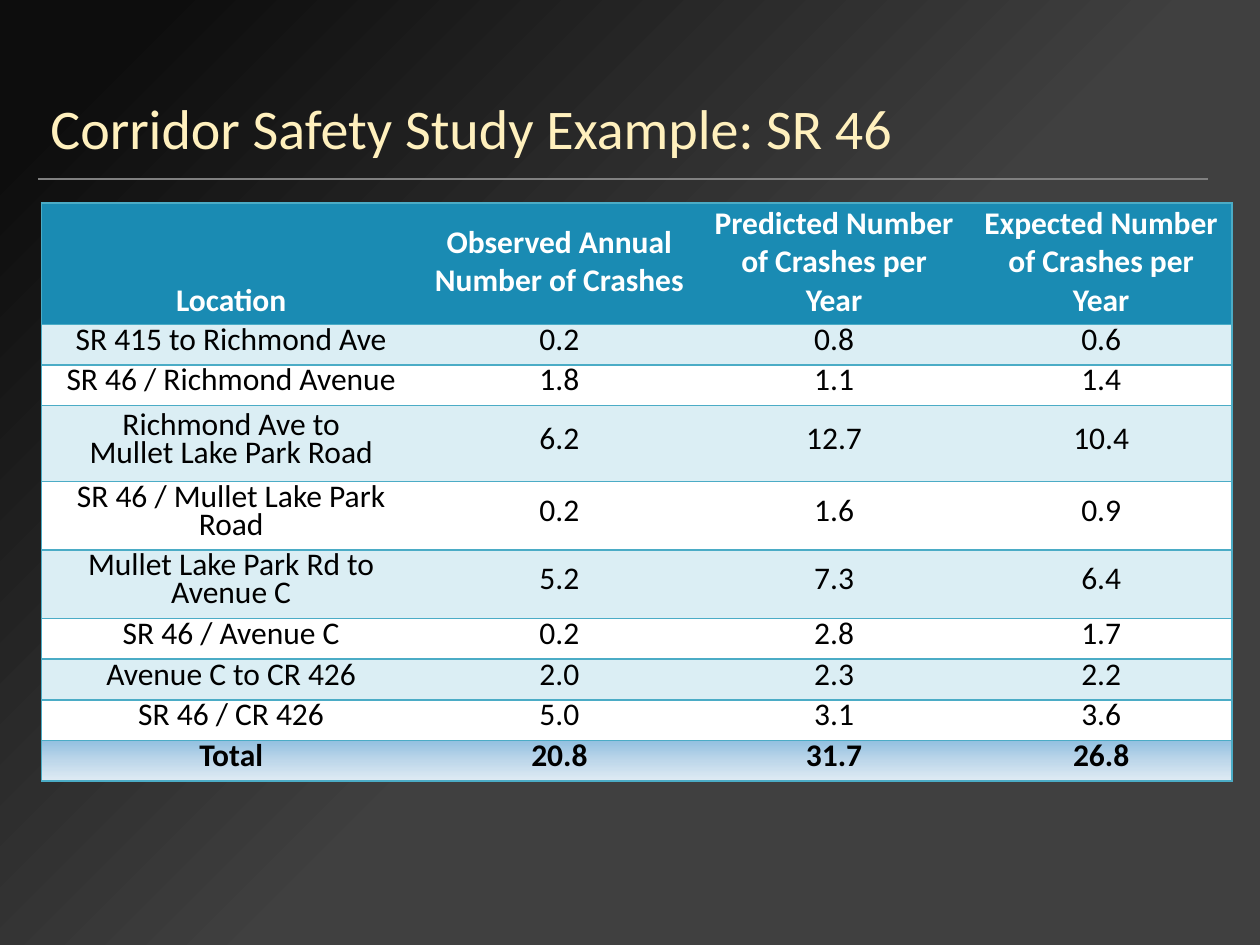
from lxml.etree import SubElement
from pptx import Presentation
from pptx.dml.color import RGBColor
from pptx.enum.shapes import MSO_CONNECTOR
from pptx.enum.text import MSO_ANCHOR, MSO_AUTO_SIZE, PP_ALIGN
from pptx.oxml.ns import qn
from pptx.util import Inches, Pt

# Content
TITLE = "Corridor Safety Study Example: SR 46"
HEADER = ("Location", "Observed Annual Number of Crashes",
          "Predicted Number of Crashes per Year", "Expected Number of Crashes per Year")
SEGMENTS = [
    ("SR 415 to Richmond Ave", "0.2", "0.8", "0.6"),
    ("SR 46 / Richmond Avenue", "1.8", "1.1", "1.4"),
    ("Richmond Ave to\vMullet Lake Park Road", "6.2", "12.7", "10.4"),
    ("SR 46 / Mullet Lake Park Road", "0.2", "1.6", "0.9"),
    ("Mullet Lake Park Rd to Avenue C", "5.2", "7.3", "6.4"),
    ("SR 46 / Avenue C", "0.2", "2.8", "1.7"),
    ("Avenue C to CR 426", "2.0", "2.3", "2.2"),
    ("SR 46 / CR 426", "5.0", "3.1", "3.6"),
]
TOTAL = ("Total", "20.8", "31.7", "26.8")
ROWS = [HEADER, *SEGMENTS, TOTAL]

# Layout and formats
COLUMN_WIDTHS = (3.01, 2.2, 2.16, 2.08)
ROW_HEIGHTS = (0.96, 0.32, 0.32, 0.6, 0.54, 0.54, 0.32, 0.32, 0.32, 0.32)
RULE_STARTS = (0.31, 0.3)
RULE_TOP, RULE_LENGTH = 1.42, 9.28
BORDER_COLOR = "4BACC6"
HEADER_FILL = "1A8BB3"
BAND_FILLS = ("DBEEF4", "FFFFFF")
TOTAL_STOPS = ((0, "92C0E0"), (50, "BED7EA"), (100, "DFEBF4"))
BACKGROUND_STOPS = ((7, "0D0D0D"), (55, "404040"))
NO_STYLE = "{2D5ABB26-0587-4C30-8999-92F81FD0307C}"
TITLE_FONT = {"name": "Calibri", "size": Pt(32), "bold": False}
CELL_FONT = {"name": "Calibri", "size": Pt(18), "bold": False}
STRONG_FONT = {**CELL_FONT, "bold": True}
HEADER_MARGINS = {"margin_top": Inches(0.01), "margin_bottom": Inches(0.04)}


def color(hex_value):
    return RGBColor.from_string(hex_value)


def set_attributes(target, values):
    for name, value in values.items():
        setattr(target, name, value)


def write_text(paragraph, text, font, hex_value, alignment):
    paragraph.text = text
    paragraph.alignment = alignment
    for run in paragraph.runs:
        set_attributes(run.font, font)
        run.font.color.rgb = color(hex_value)


def fill_gradient(fill, element, stops, clockwise_angle):
    fill.gradient()
    fill.gradient_angle = 360 - clockwise_angle
    stop_list = next(element.iter(qn("a:gsLst")))
    for stop in list(stop_list):
        stop_list.remove(stop)
    for position, hex_value in stops:
        stop = SubElement(stop_list, qn("a:gs"), pos=str(position * 1000))
        SubElement(stop, qn("a:srgbClr"), val=hex_value)


def set_borders(cell, visible_sides):
    properties = cell._tc.get_or_add_tcPr()
    for side in "LRTB":
        line = SubElement(properties, qn(f"a:ln{side}"), w=str(Pt(1)))
        if side in visible_sides:
            solid = SubElement(line, qn("a:solidFill"))
            SubElement(solid, qn("a:srgbClr"), val=BORDER_COLOR)
        else:
            SubElement(line, qn("a:noFill"))


presentation = Presentation()
presentation.slide_width, presentation.slide_height = Inches(10), Inches(7.5)
slide = presentation.slides.add_slide(presentation.slide_layouts[5])
fill_gradient(slide.background.fill, slide.element, BACKGROUND_STOPS, 45)

# Rules under the title
for start in RULE_STARTS:
    rule = slide.shapes.add_connector(
        MSO_CONNECTOR.STRAIGHT, Inches(start), Inches(RULE_TOP),
        Inches(start + RULE_LENGTH), Inches(RULE_TOP))
    rule.line.color.rgb = color("808080")
    rule.line.width = Pt(0.75)
    SubElement(rule.element.spPr, qn("a:effectLst"))

# Title
title = slide.shapes.title
set_attributes(title, {"left": Inches(0.3), "top": Inches(0.59),
                       "width": Inches(9.19), "height": Inches(0.83)})
set_attributes(title.text_frame, {"word_wrap": True, "auto_size": MSO_AUTO_SIZE.NONE,
                                  "vertical_anchor": MSO_ANCHOR.MIDDLE})
write_text(title.text_frame.paragraphs[0], TITLE, TITLE_FONT, "FFF0BD", PP_ALIGN.LEFT)

# Crash table
frame = slide.shapes.add_table(
    len(ROWS), len(HEADER), Inches(0.33), Inches(1.61),
    Inches(sum(COLUMN_WIDTHS)), Inches(sum(ROW_HEIGHTS)))
table = frame.table
next(frame.element.iter(qn("a:tableStyleId"))).text = NO_STYLE
for column, width in zip(table.columns, COLUMN_WIDTHS):
    column.width = Inches(width)
for row, height in zip(table.rows, ROW_HEIGHTS):
    row.height = Inches(height)

last_row, last_column = len(ROWS) - 1, len(HEADER) - 1
for row_index, values in enumerate(ROWS):
    is_header, is_total = row_index == 0, row_index == last_row
    for column_index, value in enumerate(values):
        cell = table.cell(row_index, column_index)
        paragraph = cell.text_frame.paragraphs[0]
        write_text(paragraph, value, STRONG_FONT if is_header or is_total else CELL_FONT,
                   "FFFFFF" if is_header else "000000", PP_ALIGN.CENTER)
        cell.vertical_anchor = MSO_ANCHOR.MIDDLE
        set_borders(cell, "TB" + {0: "L", last_column: "R"}.get(column_index, ""))
        if is_header:
            set_attributes(cell, HEADER_MARGINS)
            if column_index == 0:
                cell.vertical_anchor = MSO_ANCHOR.BOTTOM
        else:
            paragraph.line_spacing = Pt(16)
        if is_total:
            fill_gradient(cell.fill, cell._tc, TOTAL_STOPS, 90)
        else:
            cell.fill.solid()
            cell.fill.fore_color.rgb = color(
                HEADER_FILL if is_header else BAND_FILLS[(row_index - 1) % 2])

presentation.save("out.pptx")
